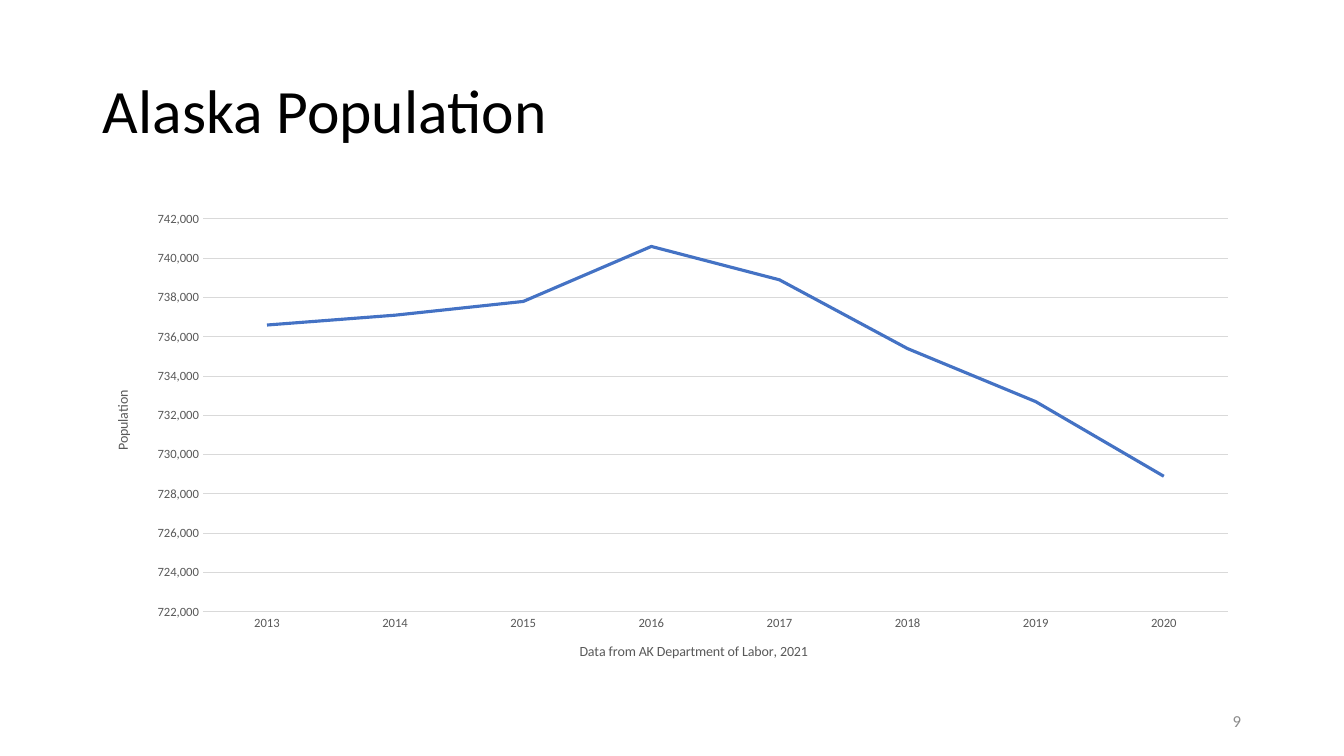
import dataclasses

import pptx
import pptx.chart.data
import pptx.dml.color
import pptx.enum.chart
import pptx.enum.text
import pptx.oxml
import pptx.oxml.ns
import pptx.util

POPULATION = {
    "2013": 736600, "2014": 737100, "2015": 737800, "2016": 740600,
    "2017": 738900, "2018": 735400, "2019": 732700, "2020": 728900,
}


@dataclasses.dataclass(frozen=True)
class Theme:
    font: str = "Calibri"
    title: str = "000000"
    label: str = "595959"
    grid: str = "D9D9D9"
    series: str = "4472C4"
    number: str = "8C8C8C"
    title_size: int = 44
    number_size: int = 12
    axis_title_size: int = 10
    tick_size: int = 9


def px(n):
    return pptx.util.Emu(round(n * 914400 / 100.8))


def rgb(value):
    return pptx.dml.color.RGBColor.from_string(value)


class SlideBuilder:
    def __init__(self, prs, theme):
        self.theme = theme
        self.s = prs.slides.add_slide(prs.slide_layouts[6])

    def style(self, font, size, color):
        font.name = self.theme.font
        font.size = pptx.util.Pt(size)
        font.bold = False
        font.color.rgb = rgb(color)

    def line(self, fmt, color, width):
        fmt.line.color.rgb = rgb(color)
        fmt.line.width = pptx.util.Pt(width)

    def text(self, box, text, size, color, align, spacing=1.0):
        sp = self.s.shapes.add_textbox(*map(px, box))
        tf = sp.text_frame
        tf.word_wrap = True
        tf.vertical_anchor = pptx.enum.text.MSO_ANCHOR.MIDDLE
        p = tf.paragraphs[0]
        p.alignment = align
        p.line_spacing = spacing
        r = p.add_run()
        r.text = text
        self.style(r.font, size, color)

    def place(self, parent, frame, box, inner=False):
        """Fix a chart part at box, both given in slide px; a title keeps its own size."""
        left, top, width, height = frame
        values = [("x", (box[0] - left) / width), ("y", (box[1] - top) / height)]
        if inner:
            values += [("w", box[2] / width), ("h", box[3] / height)]
        modes = "".join(f'<c:{k}Mode val="edge"/>' for k in "xy")
        sizes = "".join(f'<c:{k} val="{v:.4f}"/>' for k, v in values)
        target = '<c:layoutTarget val="inner"/>' if inner else ""
        layout = pptx.oxml.parse_xml(
            f'<c:layout {pptx.oxml.ns.nsdecls("c")}><c:manualLayout>'
            f"{target}{modes}{sizes}</c:manualLayout></c:layout>")
        old = parent.find(pptx.oxml.ns.qn("c:layout"))
        if old is not None:
            parent.replace(old, layout)
        elif inner:
            parent.insert(0, layout)
        else:
            parent.find(pptx.oxml.ns.qn("c:tx")).addnext(layout)

    def axis(self, axis, title, frame, corner, rotation=0):
        axis.major_tick_mark = pptx.enum.chart.XL_TICK_MARK.NONE
        axis.minor_tick_mark = pptx.enum.chart.XL_TICK_MARK.NONE
        self.style(axis.tick_labels.font, self.theme.tick_size, self.theme.label)
        tf = axis.axis_title.text_frame
        r = tf.paragraphs[0].add_run()
        r.text = title
        self.style(r.font, self.theme.axis_title_size, self.theme.label)
        body = tf._txBody.bodyPr
        body.set("rot", str(rotation * 60000))
        body.set("vert", "horz")
        self.place(axis.axis_title._element, frame, corner)

    def line_chart(self, frame, plot, name, values, x_title, y_title):
        """Draw one series; each axis title is a (text, corner) pair."""
        data = pptx.chart.data.CategoryChartData(number_format="#,##0")
        data.categories = list(values)
        data.add_series(name, list(values.values()))
        chart = self.s.shapes.add_chart(
            pptx.enum.chart.XL_CHART_TYPE.LINE, *map(px, frame), data).chart
        chart.has_title = False
        chart.has_legend = False
        self.style(chart.font, self.theme.axis_title_size, self.theme.title)
        chart.plots[0].vary_by_categories = False
        series = chart.plots[0].series[0]
        series.smooth = False
        self.line(series.format, self.theme.series, 2.25)

        self.axis(chart.category_axis, x_title[0], frame, x_title[1])
        self.line(chart.category_axis.format, self.theme.grid, 0.75)

        value_axis = chart.value_axis
        self.axis(value_axis, y_title[0], frame, y_title[1], rotation=-90)
        value_axis.minimum_scale = 722000
        value_axis.maximum_scale = 742000
        value_axis.major_unit = 2000
        value_axis.tick_labels.number_format = "#,##0"
        value_axis.tick_labels.number_format_is_linked = False
        value_axis.format.line.fill.background()
        value_axis.has_major_gridlines = True
        self.line(value_axis.major_gridlines.format, self.theme.grid, 0.75)
        self.place(chart._chartSpace.chart.plotArea, frame, plot, inner=True)


def main():
    prs = pptx.Presentation()
    prs.slide_width, prs.slide_height = px(1344), px(756)
    theme = Theme()
    align = pptx.enum.text.PP_ALIGN
    slide = SlideBuilder(prs, theme)
    slide.text((93, 41, 1159, 146), "Alaska Population",
               theme.title_size, theme.title, align.LEFT, spacing=0.9)
    slide.line_chart(
        (93, 202, 1159, 480), (203, 219, 1025, 393), "Series 1", POPULATION,
        x_title=("Data from AK Department of Labor, 2021", (577, 640)),
        y_title=("Population", (111, 388)))
    slide.text((949, 701, 302, 40), "9",
               theme.number_size, theme.number, align.RIGHT)
    prs.save("out.pptx")


if __name__ == "__main__":
    main()
